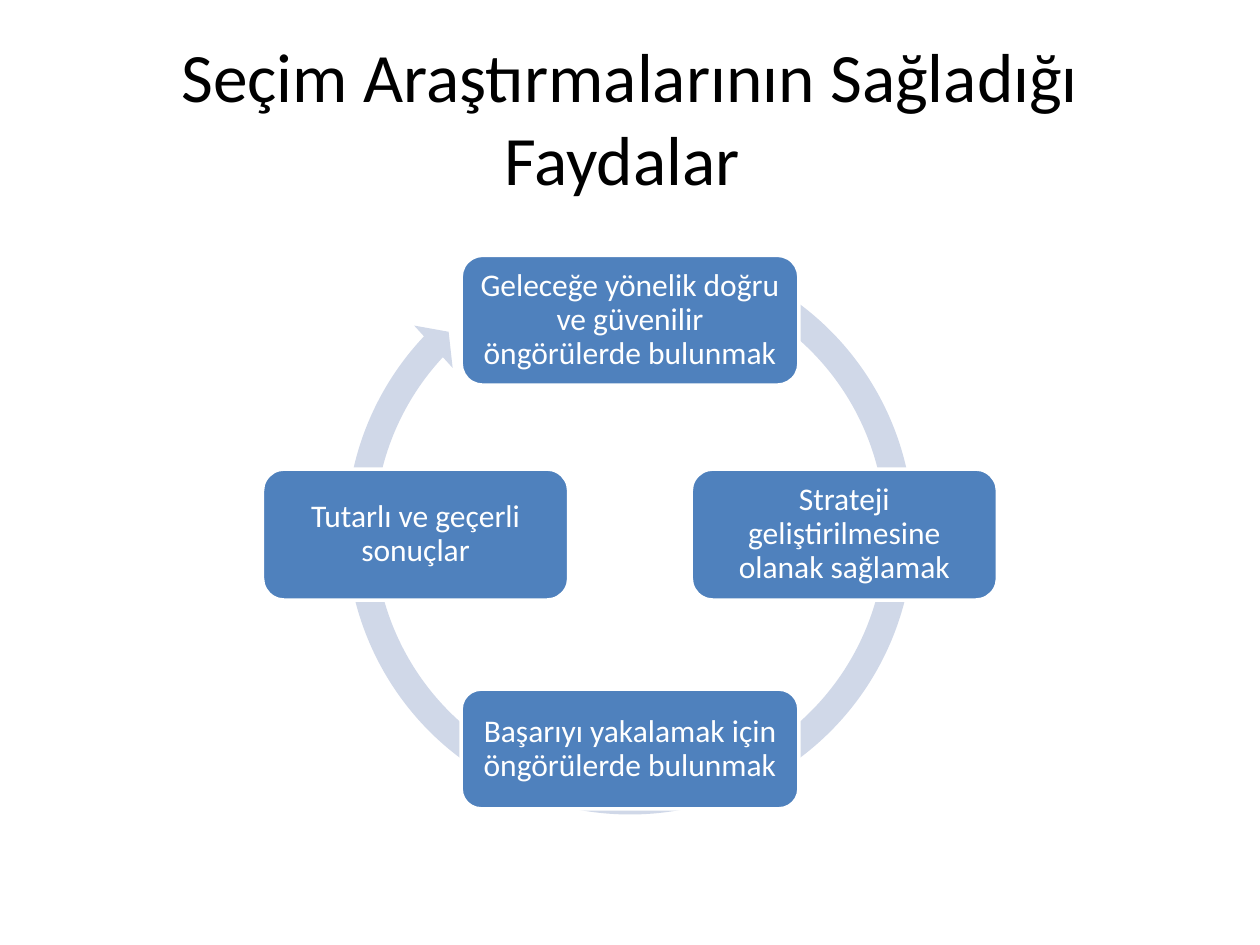
from pptx import Presentation
from pptx.dml.color import RGBColor
from pptx.enum.shapes import MSO_SHAPE as Shape
from pptx.enum.text import MSO_ANCHOR as Anchor, PP_ALIGN as Align
from pptx.util import Pt

COLORS = {"title": "000000", "ring": "D0D8E8", "box": "4F81BD", "white": "FFFFFF"}


def write_text(shape, text, size, color, inset, spacing):
    frame = shape.text_frame
    frame.word_wrap = True
    frame.vertical_anchor = Anchor.MIDDLE
    for side, value in inset.items():
        setattr(frame, f"margin_{side}", Pt(value))
    paragraph = frame.paragraphs[0]
    paragraph.text = text
    paragraph.alignment = Align.CENTER
    paragraph.line_spacing = spacing
    for name, value in {"name": "Calibri", "size": Pt(size)}.items():
        setattr(paragraph.font, name, value)
    paragraph.font.color.rgb = RGBColor.from_string(COLORS[color])


def add_filled(kind, center_x, center_y, width, height, color):
    """Add a preset shape around a centre point."""
    shape = slide.shapes.add_shape(
        kind, Pt(center_x - width / 2), Pt(center_y - height / 2), Pt(width), Pt(height))
    shape.shadow.inherit = False
    shape.fill.solid()
    shape.fill.fore_color.rgb = RGBColor.from_string(COLORS[color])
    return shape


presentation = Presentation()
presentation.slide_width, presentation.slide_height = Pt(720), Pt(540)
slide = presentation.slides.add_slide(presentation.slide_layouts[6])

title = slide.shapes.add_textbox(Pt(36), Pt(21.6), Pt(648), Pt(90))
write_text(title, "Seçim Araştırmalarının Sağladığı Faydalar ", 39.6, "title",
           {"left": 7.2, "right": 7.2, "top": 3.6, "bottom": 3.6}, 1.0)

# The cycle: a ring arrow behind four boxes at equal distance from its centre
CENTER_X, CENTER_Y, RADIUS = 360, 305.5, 122.5
ring = add_filled(Shape.CIRCULAR_ARROW, CENTER_X, 303.5, 340.6, 340.6, "ring")
ring.line.fill.background()
for index, value in enumerate([0.047, 2.729, 133.898, 176.625, 0.048]):
    ring.adjustments[index] = value

# Direction from the centre, width, height, text
boxes = [
    (0, -1, 193, 74.2, "Geleceğe yönelik doğru ve güvenilir öngörülerde bulunmak"),
    (1, 0, 175, 74.9, "Strateji geliştirilmesine olanak sağlamak"),
    (0, 1, 193, 68.4, "Başarıyı yakalamak için öngörülerde bulunmak"),
    (-1, 0, 175, 74.9, "Tutarlı ve geçerli sonuçlar"),
]
for step_x, step_y, width, height, text in boxes:
    box = add_filled(Shape.ROUNDED_RECTANGLE, CENTER_X + RADIUS * step_x,
                     CENTER_Y + RADIUS * step_y, width, height, "box")
    box.line.color.rgb = RGBColor.from_string(COLORS["white"])
    box.line.width = Pt(2)
    write_text(box, text, 18, "white",
               dict.fromkeys(["left", "right", "top", "bottom"], 5.4), 0.9)

presentation.save("out.pptx")
